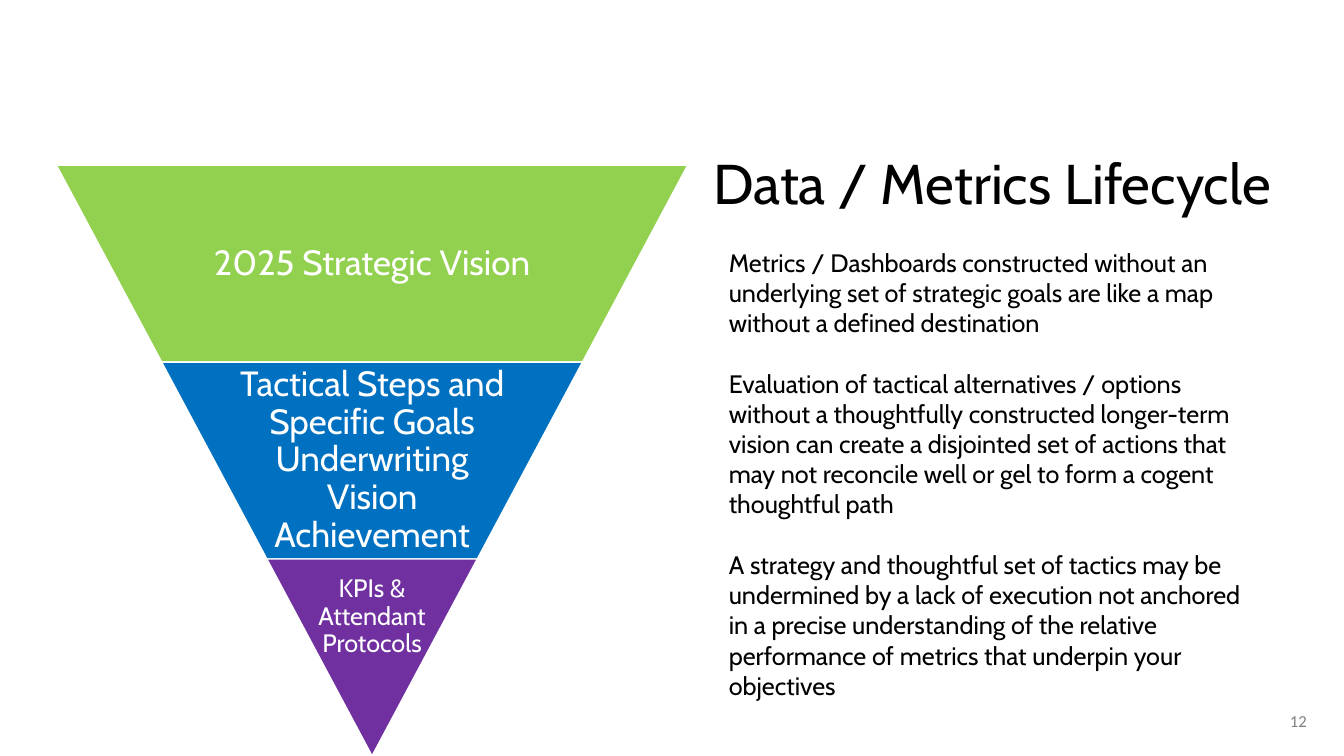
from dataclasses import dataclass

from pptx import Presentation
from pptx.dml.color import RGBColor
from pptx.enum.shapes import MSO_SHAPE
from pptx.enum.text import MSO_ANCHOR, MSO_AUTO_SIZE, PP_ALIGN
from pptx.util import Inches, Pt

TRAPEZOID = MSO_SHAPE.TRAPEZOID
TOP, MIDDLE = MSO_ANCHOR.TOP, MSO_ANCHOR.MIDDLE
LEFT, CENTER, RIGHT = PP_ALIGN.LEFT, PP_ALIGN.CENTER, PP_ALIGN.RIGHT
TITLE_ONLY = 5


@dataclass(frozen=True)
class Theme:
    font: str = "Cabin"
    number_font: str = "Calibri"
    black: str = "000000"
    white: str = "FFFFFF"
    gray: str = "808080"
    green: str = "92D050"
    blue: str = "0070C0"
    purple: str = "7030A0"
    title_size: int = 40
    level_size: int = 25
    body_size: int = 18
    number_size: int = 12


THEME = Theme()

# Pyramid geometry, in inches
PYRAMID_LEFT, PYRAMID_TOP, PYRAMID_WIDTH = 0.56, 1.64, 6.26
LEVEL_HEIGHT = 1.953
CENTER_X = PYRAMID_LEFT + PYRAMID_WIDTH / 2

# Label, fill, label width, type size, anchor, top inset
LEVELS = [
    ("2025 Strategic Vision", THEME.green, 4.07, THEME.level_size, MIDDLE, 0.03),
    ("Tactical Steps and Specific Goals Underwriting Vision Achievement",
     THEME.blue, 2.71, THEME.level_size, MIDDLE, 0.03),
    ("KPIs &\vAttendant\vProtocols", THEME.purple, 2.11, THEME.body_size, TOP, 0.17),
]

MESSAGES = [
    "Metrics / Dashboards constructed without an underlying set of strategic goals "
    "are like a map without a defined destination",
    "Evaluation of tactical alternatives / options without a thoughtfully constructed "
    "longer-term vision can create a disjointed set of actions that may not reconcile "
    "well or gel to form a cogent thoughtful path",
    "A strategy and thoughtful set of tactics may be undermined by a lack of execution "
    "not anchored in a precise understanding of the relative performance of metrics "
    "that underpin your objectives",
]


def write_text(shape, paragraphs, *, size, color=THEME.black, font=THEME.font,
               align=LEFT, anchor=TOP, line_spacing=1.0, gap=0, insets=None,
               auto_size=MSO_AUTO_SIZE.NONE):
    """Fill a shape with formatted paragraphs; insets are (side, top, bottom)."""
    frame = shape.text_frame
    frame.word_wrap = True
    frame.auto_size = auto_size
    frame.vertical_anchor = anchor
    if insets:
        side, top, bottom = insets
        frame.margin_left = frame.margin_right = Inches(side)
        frame.margin_top, frame.margin_bottom = Inches(top), Inches(bottom)
    for index, text in enumerate(paragraphs):
        paragraph = frame.add_paragraph() if index else frame.paragraphs[0]
        paragraph.text = text
        paragraph.alignment = align
        paragraph.line_spacing = line_spacing
        paragraph.space_before = Pt(gap if index else 0)
        for run in paragraph.runs:
            run.font.name = font
            run.font.size = Pt(size)
            run.font.color.rgb = RGBColor.from_string(color)


def add_text(slide, box, paragraphs, **text_format):
    shape = slide.shapes.add_textbox(*map(Inches, box))
    write_text(shape, paragraphs, **text_format)


def add_title(slide, box, text):
    title = slide.shapes.title
    title.left, title.top, title.width, title.height = map(Inches, box)
    write_text(title, [text], size=THEME.title_size, align=CENTER, anchor=MIDDLE,
               line_spacing=0.9)


def add_level(slide, index, label, fill, label_width, size, anchor, top_inset):
    """Draw one level of the inverted pyramid with its label."""
    top = PYRAMID_TOP + index * LEVEL_HEIGHT
    width = PYRAMID_WIDTH * (len(LEVELS) - index) / len(LEVELS)
    level = slide.shapes.add_shape(
        TRAPEZOID, Inches(CENTER_X - width / 2), Inches(top),
        Inches(width), Inches(LEVEL_HEIGHT))
    level.rotation = 180
    level.adjustments[0] = PYRAMID_WIDTH / 2 / len(LEVELS) / LEVEL_HEIGHT
    level.shadow.inherit = False
    level.fill.solid()
    level.fill.fore_color.rgb = RGBColor.from_string(fill)
    level.line.color.rgb = RGBColor.from_string(THEME.white)
    level.line.width = Pt(1)
    add_text(slide, (CENTER_X - label_width / 2, top, label_width, LEVEL_HEIGHT),
             [label], size=size, color=THEME.white, align=CENTER, anchor=anchor,
             line_spacing=0.9, insets=(0.03, top_inset, 0.03))


def main():
    presentation = Presentation()
    presentation.slide_width = Inches(13.33)
    presentation.slide_height = Inches(7.5)
    slide = presentation.slides.add_slide(presentation.slide_layouts[TITLE_ONLY])

    # Inverted pyramid
    for index, level in enumerate(LEVELS):
        add_level(slide, index, *level)

    # Title, messages and slide number
    add_title(slide, (6.91, 1.42, 5.86, 0.85), "Data / Metrics Lifecycle")
    add_text(slide, (7.13, 2.4, 5.28, 4.64), MESSAGES, size=THEME.body_size,
             gap=21.6, auto_size=MSO_AUTO_SIZE.SHAPE_TO_FIT_TEXT)
    add_text(slide, (10.06, 6.95, 3, 0.4), ["12"], size=THEME.number_size,
             color=THEME.gray, font=THEME.number_font, align=RIGHT, anchor=MIDDLE)

    presentation.save("out.pptx")


if __name__ == "__main__":
    main()
